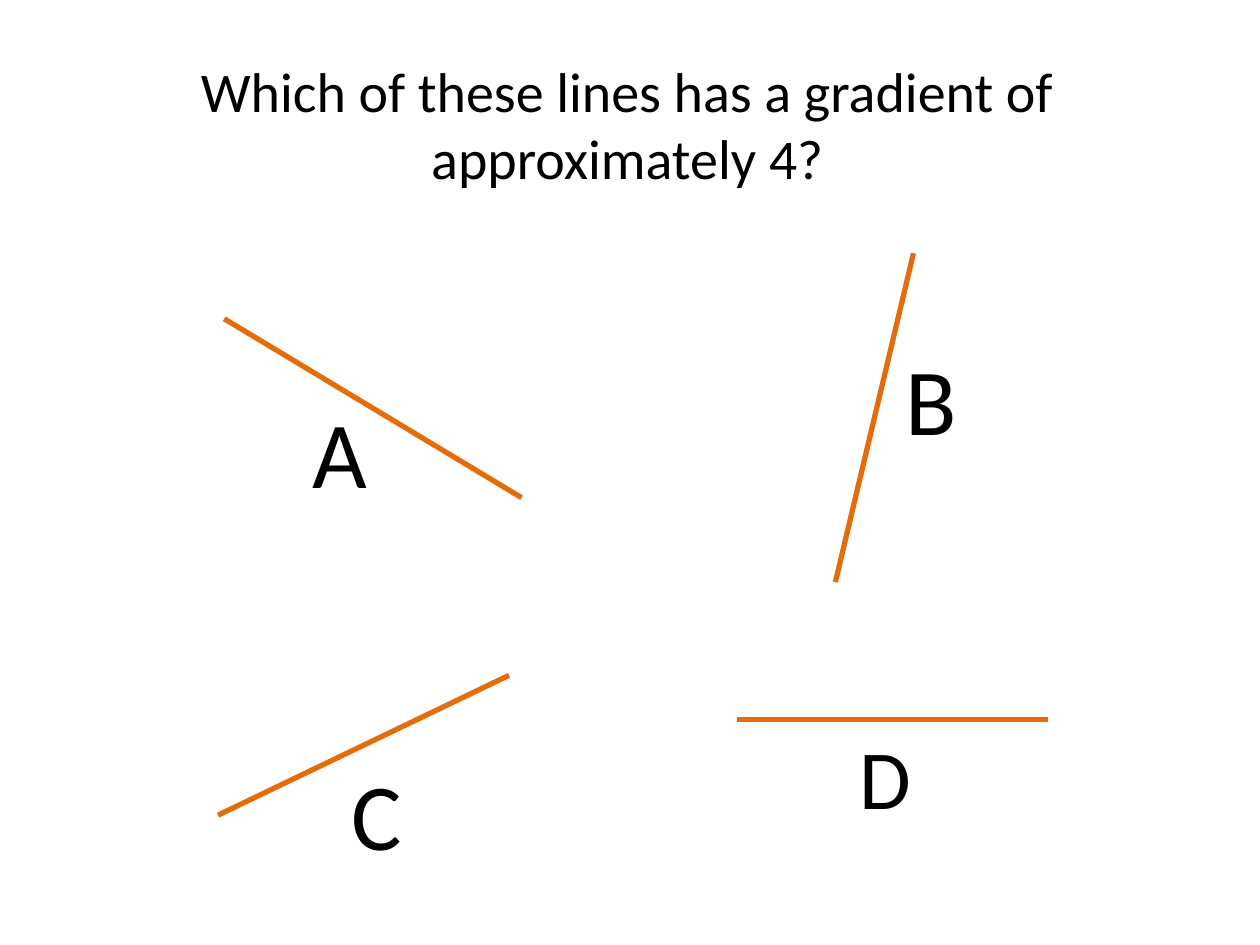
from dataclasses import dataclass

from lxml import etree
from pptx import Presentation
from pptx.dml.color import RGBColor
from pptx.enum.shapes import MSO_CONNECTOR
from pptx.enum.text import MSO_ANCHOR, MSO_AUTO_SIZE, PP_ALIGN
from pptx.oxml.ns import qn
from pptx.util import Inches, Pt

STRAIGHT = MSO_CONNECTOR.STRAIGHT
TOP = MSO_ANCHOR.TOP
FIT_SHAPE = MSO_AUTO_SIZE.SHAPE_TO_FIT_TEXT
CENTER = PP_ALIGN.CENTER
LEFT = PP_ALIGN.LEFT
TITLE_ONLY_LAYOUT = 5


@dataclass(frozen=True)
class Theme:
    """Colours, font and sizes used on the slide."""
    font: str = "Calibri"
    text: RGBColor = RGBColor(0x00, 0x00, 0x00)
    line: RGBColor = RGBColor(0xE4, 0x6C, 0x0A)
    line_width: float = 3
    title_size: float = 32
    label_size: float = 54
    small_label_size: float = 48


THEME = Theme()
QUESTION = "Which of these lines has a gradient of approximately 4?"
OPTIONS = [
    ("A", (4.14, 3.95), (1.78, 2.53), (2.38, 3.08, 0.64, 1.01), THEME.label_size),
    ("B", (7.25, 2.01), (6.63, 4.62), (7.09, 2.66, 0.61, 1.01), THEME.label_size),
    ("C", (4.04, 5.36), (1.73, 6.47), (2.69, 5.95, 0.61, 1.01), THEME.label_size),
    ("D", (8.32, 5.71), (5.85, 5.71), (6.72, 5.71, 0.62, 0.91), THEME.small_label_size),
]


def write_text(shape, text, size, alignment):
    """Fill a shape with one styled paragraph and fit the shape to it."""
    shape.text_frame.text = text
    shape.text_frame.auto_size = FIT_SHAPE
    paragraph = shape.text_frame.paragraphs[0]
    paragraph.alignment = alignment
    paragraph.font.name = THEME.font
    paragraph.font.size = Pt(size)
    paragraph.font.color.rgb = THEME.text


def add_title(slide, text):
    """Place the question in the title placeholder."""
    title = slide.shapes.title
    title.left, title.top = Inches(1.45), Inches(0.4)
    title.width, title.height = Inches(7.06), Inches(1.18)
    write_text(title, text, THEME.title_size, CENTER)
    title.text_frame.vertical_anchor = TOP


def add_line(shapes, start, end):
    """Draw a straight line without a shadow."""
    line = shapes.add_connector(STRAIGHT, *map(Inches, start + end))
    line.line.color.rgb = THEME.line
    line.line.width = Pt(THEME.line_width)
    etree.SubElement(line._element.spPr, qn("a:effectLst"))


def add_label(shapes, text, box, size):
    """Add an unwrapped letter beside a line."""
    label = shapes.add_textbox(*map(Inches, box))
    write_text(label, text, size, LEFT)
    label.text_frame.word_wrap = False


def add_option(slide, letter, start, end, box, size):
    """Group a line with its letter."""
    group = slide.shapes.add_group_shape()
    add_line(group.shapes, start, end)
    add_label(group.shapes, letter, box, size)


def main():
    """Build and save the slide."""
    presentation = Presentation()
    presentation.slide_width = Inches(10)
    presentation.slide_height = Inches(7.5)
    slide = presentation.slides.add_slide(presentation.slide_layouts[TITLE_ONLY_LAYOUT])
    add_title(slide, QUESTION)
    for option in OPTIONS:
        add_option(slide, *option)
    presentation.save("out.pptx")


if __name__ == "__main__":
    main()
